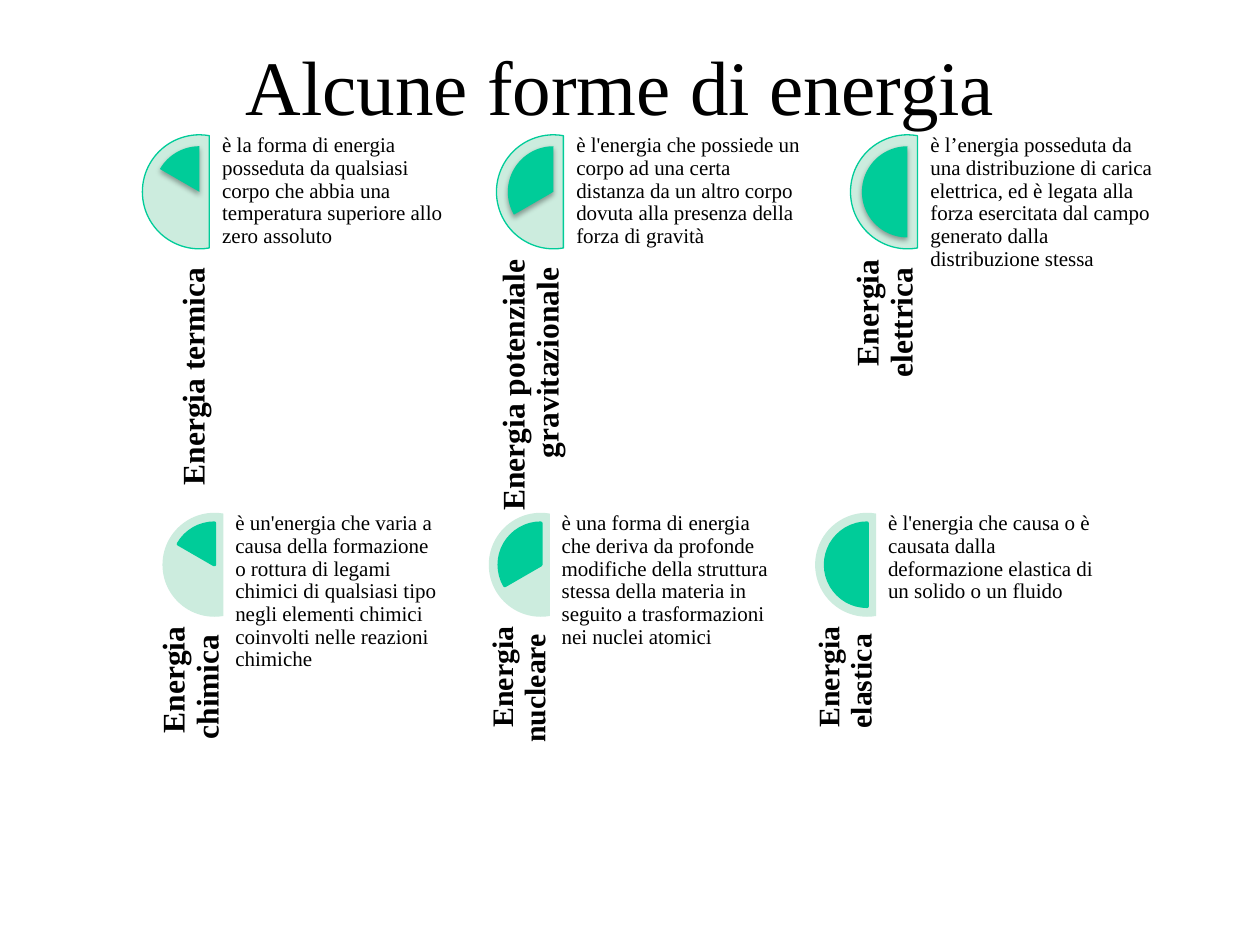
"""Builds a slide that presents six forms of energy in two rows."""
from lxml.etree import SubElement
from pptx import Presentation
from pptx.dml.color import RGBColor
from pptx.enum.shapes import MSO_SHAPE as SHAPE
from pptx.enum.text import MSO_ANCHOR as ANCHOR, PP_ALIGN as ALIGN
from pptx.oxml.ns import qn
from pptx.util import Inches, Pt

GREEN, PALE, BLACK = "00CC99", "CCECDE", "000000"
FONT = "Times New Roman"
PIE_STARTS = (210, 150, 90)
ROWS = [
    dict(left=1.13, top=1.07, pitch=2.81, body=1.81, chord_line=0.75, pie_line=None, items=[
        ("Energia termica ", 18, 0,
         "è la forma di energia posseduta da qualsiasi corpo che abbia "
         "una temperatura superiore allo zero assoluto"),
        ("Energia potenziale gravitazionale ", 18, 0,
         "è l'energia che possiede un corpo ad una certa distanza da un altro corpo "
         "dovuta alla presenza della forza di gravità"),
        ("Energia elettrica ", 18, 1,
         "è l’energia posseduta da una distribuzione di carica elettrica, ed è legata alla "
         "forza esercitata dal campo generato dalla distribuzione stessa"),
    ]),
    dict(left=1.29, top=4.07, pitch=2.59, body=1.65, chord_line=None, pie_line=2, items=[
        ("Energia chimica ", 18, 1,
         "è un'energia che varia a causa della formazione o rottura di legami chimici di "
         "qualsiasi tipo negli elementi chimici coinvolti nelle reazioni chimiche"),
        ("Energia nucleare ", 17, 1,
         "è una forma di energia che deriva da profonde modifiche della struttura stessa "
         "della materia in seguito a trasformazioni nei nuclei atomici"),
        ("Energia elastica ", 17, 1,
         "è l'energia che causa o è causata dalla deformazione elastica di un solido "
         "o un fluido"),
    ]),
]


def rgb(color):
    return RGBColor.from_string(color)


def write(tf, text, size=12, bold=False, align=ALIGN.LEFT, spacing=0.9):
    p = tf.paragraphs[0]
    p.alignment, p.line_spacing = align, spacing
    r = p.add_run()
    r.text = text
    r.font.name, r.font.size, r.font.bold = FONT, Pt(size), bold
    r.font.color.rgb = rgb(BLACK)


class Deck:
    def __init__(self):
        self.prs = Presentation()
        self.prs.slide_width, self.prs.slide_height = Inches(10), Inches(7.5)
        self.s = self.prs.slides.add_slide(self.prs.slide_layouts[6])
        self.shapes = self.s.shapes

    def group(self):
        self.shapes = self.s.shapes.add_group_shape().shapes

    def text(self, x, y, w, h, text, anchor=ANCHOR.TOP, rotation=0, indent=0, **fmt):
        sp = self.shapes.add_textbox(Inches(x), Inches(y), Inches(w), Inches(h))
        sp.rotation = rotation
        tf = sp.text_frame
        tf.word_wrap, tf.vertical_anchor = True, anchor
        tf.margin_left = Inches(indent)
        tf.margin_right = tf.margin_top = tf.margin_bottom = 0
        write(tf, text, **fmt)

    def arc(self, kind, x, y, size, start, end, fill, line):
        sp = self.shapes.add_shape(kind, Inches(x), Inches(y), Inches(size), Inches(size))
        sp.shadow.inherit = False
        for i, angle in enumerate((start, end)):
            sp.adjustments[i] = angle * 0.6
        sp.fill.solid()
        sp.fill.fore_color.rgb = rgb(fill)
        if line:
            sp.line.color.rgb, sp.line.width = rgb(GREEN), Pt(line)
        else:
            sp.line.fill.background()
        return sp

    def shadow(self, sp):
        effects = sp._element.spPr.find(qn("a:effectLst"))
        outer = SubElement(effects, qn("a:outerShdw"), blurRad=str(Pt(3.1)), dist=str(Pt(1.8)),
                           dir="5400000", rotWithShape="0")
        color = SubElement(outer, qn("a:srgbClr"), val=BLACK)
        SubElement(color, qn("a:alpha"), val="35000")

    def row(self, left, top, pitch, body, chord_line, pie_line, items):
        self.group()
        d = body / 2
        for i, (label, size, indent, description) in enumerate(items):
            x = left + i * pitch
            self.arc(SHAPE.CHORD, x, top, d, 80, 280, PALE, chord_line)
            pie = self.arc(SHAPE.PIE, x + 0.1 * d, top + 0.1 * d, 0.8 * d,
                           PIE_STARTS[i], 270, GREEN, pie_line)
            if not pie_line:
                self.shadow(pie)
            self.text(x - 1.15 * d, top + 2.25 * d, 2.91 * d, 0.6 * d, label, ANCHOR.BOTTOM,
                      270, indent, size=size, bold=True, align=ALIGN.RIGHT)
            self.text(x + 0.7 * d, top, body, 4 * d, description)


def main():
    deck = Deck()
    deck.text(0.75, 0.05, 8.5, 1.25, "Alcune forme di energia ", ANCHOR.MIDDLE,
              size=44, align=ALIGN.CENTER, spacing=1)
    for row in ROWS:
        deck.row(**row)
    deck.prs.save("out.pptx")


if __name__ == "__main__":
    main()
